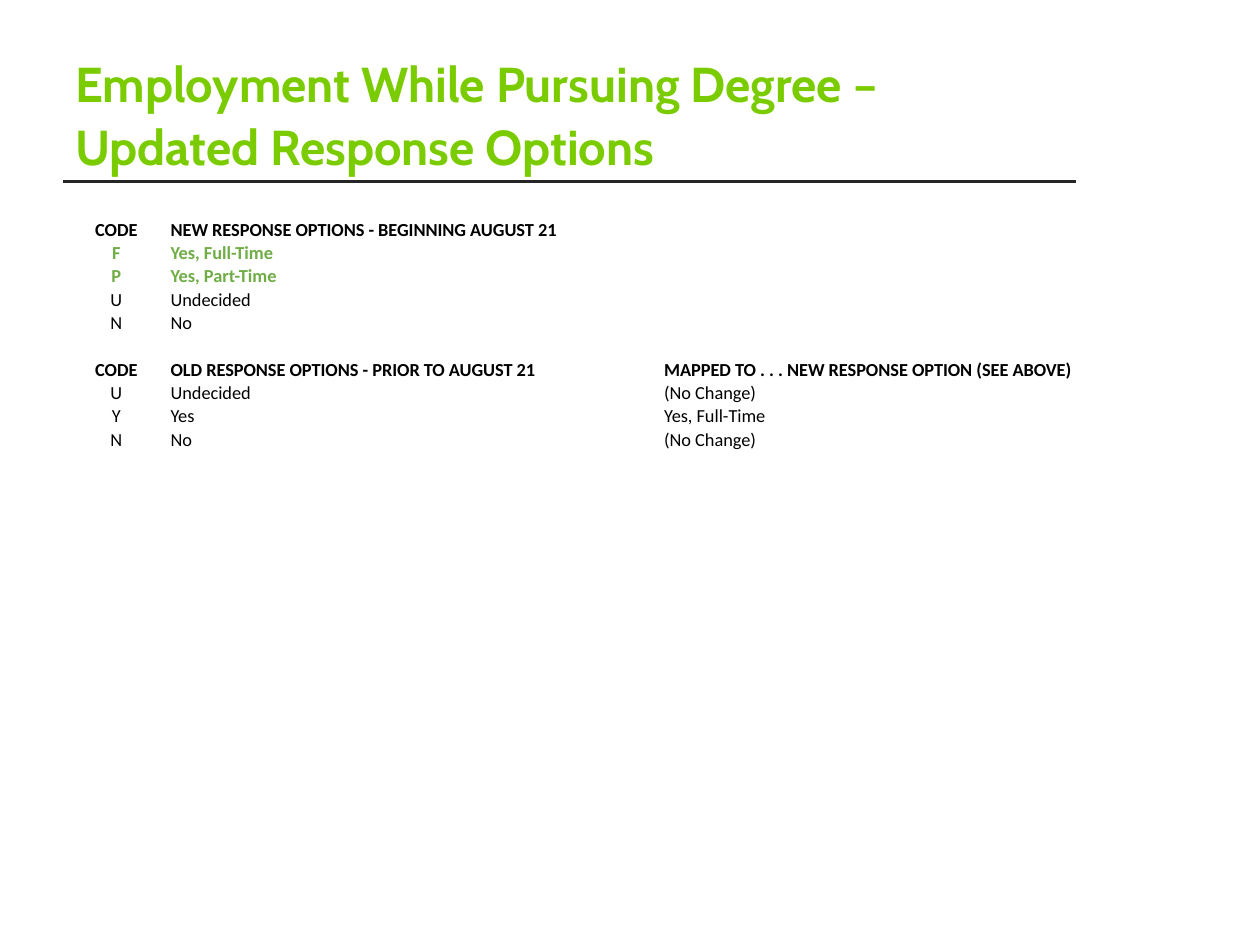
from dataclasses import dataclass

import lxml.etree
import pptx
import pptx.dml.color
import pptx.enum.shapes
import pptx.enum.text
import pptx.oxml.ns
import pptx.util

Cm = pptx.util.Cm
Pt = pptx.util.Pt
RGBColor = pptx.dml.color.RGBColor
PP_ALIGN = pptx.enum.text.PP_ALIGN
MSO_ANCHOR = pptx.enum.text.MSO_ANCHOR
qn = pptx.oxml.ns.qn

LIME = RGBColor(0x7A, 0xCC, 0x00)
GREEN = RGBColor(0x70, 0xAD, 0x47)
BLACK = RGBColor(0x00, 0x00, 0x00)
CHARCOAL = RGBColor(0x26, 0x26, 0x26)

LEFT, WIDTH = Cm(1.27), Cm(20.43)
RULE_Y = Cm(3.66)
ROW_HEIGHT = Cm(0.47)
COLUMN_WIDTHS = (Cm(2.15), Cm(9.95), Cm(8.33))
CELL_SIZE = Pt(10.5)


@dataclass(frozen=True)
class Row:
    code: str = ""
    option: str = ""
    mapped: str = ""
    bold: bool = False
    color: RGBColor = BLACK


ROWS = (
    Row("CODE", "NEW RESPONSE OPTIONS - BEGINNING AUGUST 21", bold=True),
    Row("F", "Yes, Full-Time", bold=True, color=GREEN),
    Row("P", "Yes, Part-Time", bold=True, color=GREEN),
    Row("U", "Undecided"),
    Row("N", "No"),
    Row(),
    Row("CODE", "OLD RESPONSE OPTIONS - PRIOR TO AUGUST 21",
        "MAPPED TO . . . NEW RESPONSE OPTION (SEE ABOVE)", bold=True),
    Row("U", "Undecided", "(No Change)"),
    Row("Y", "Yes", "Yes, Full-Time"),
    Row("N", "No", "(No Change)"),
)


def write_text(tf, text: str, *, font: str, size: int, color: RGBColor,
               bold: bool = False, align=PP_ALIGN.LEFT, spacing=None) -> None:
    p = tf.paragraphs[0]
    p.alignment = align
    p.line_spacing = spacing
    if not text:
        end = lxml.etree.SubElement(p._p, qn("a:endParaRPr"))
        end.set("sz", str(int(size.pt * 100)))
        return
    r = p.add_run()
    r.text = text
    r.font.name = font
    r.font.size = size
    r.font.bold = bold
    r.font.color.rgb = color


def add_title(s, text: str) -> None:
    top = Cm(0.89)
    tf = s.shapes.add_textbox(LEFT, top, WIDTH, RULE_Y - top).text_frame
    tf.word_wrap = True
    tf.vertical_anchor = MSO_ANCHOR.BOTTOM
    write_text(tf, text, font="Cabin", size=Pt(28), color=LIME, bold=True,
               spacing=Pt(36))


def add_rule(s) -> None:
    line = s.shapes.add_connector(pptx.enum.shapes.MSO_CONNECTOR.STRAIGHT,
                                  LEFT, RULE_Y, LEFT + WIDTH, RULE_Y)
    line.line.color.rgb = CHARCOAL
    line.line.width = Pt(1.5)
    lxml.etree.SubElement(line._element.spPr, qn("a:effectLst"))


def add_options_table(s, rows: tuple[Row, ...]) -> None:
    table = s.shapes.add_table(len(rows), len(COLUMN_WIDTHS), LEFT, Cm(4.39),
                               WIDTH, ROW_HEIGHT * len(rows)).table
    table.first_row = False
    table.horz_banding = False
    for column, width in zip(table.columns, COLUMN_WIDTHS):
        column.width = width
    for i, row in enumerate(rows):
        table.rows[i].height = ROW_HEIGHT
        for j, text in enumerate((row.code, row.option, row.mapped)):
            cell = table.cell(i, j)
            cell.fill.background()
            cell.vertical_anchor = MSO_ANCHOR.BOTTOM
            cell.margin_left = cell.margin_right = cell.margin_top = Cm(0.02)
            cell.margin_bottom = 0
            write_text(cell.text_frame, text, font="Calibri", size=CELL_SIZE,
                       color=row.color, bold=row.bold,
                       align=PP_ALIGN.LEFT if j else PP_ALIGN.CENTER)


def main() -> None:
    prs = pptx.Presentation()
    prs.slide_width, prs.slide_height = Cm(25.4), Cm(19.05)
    s = prs.slides.add_slide(prs.slide_layouts[6])
    add_rule(s)
    add_title(s, "Employment While Pursuing Degree – Updated Response Options")
    add_options_table(s, ROWS)
    prs.save("out.pptx")


if __name__ == "__main__":
    main()
